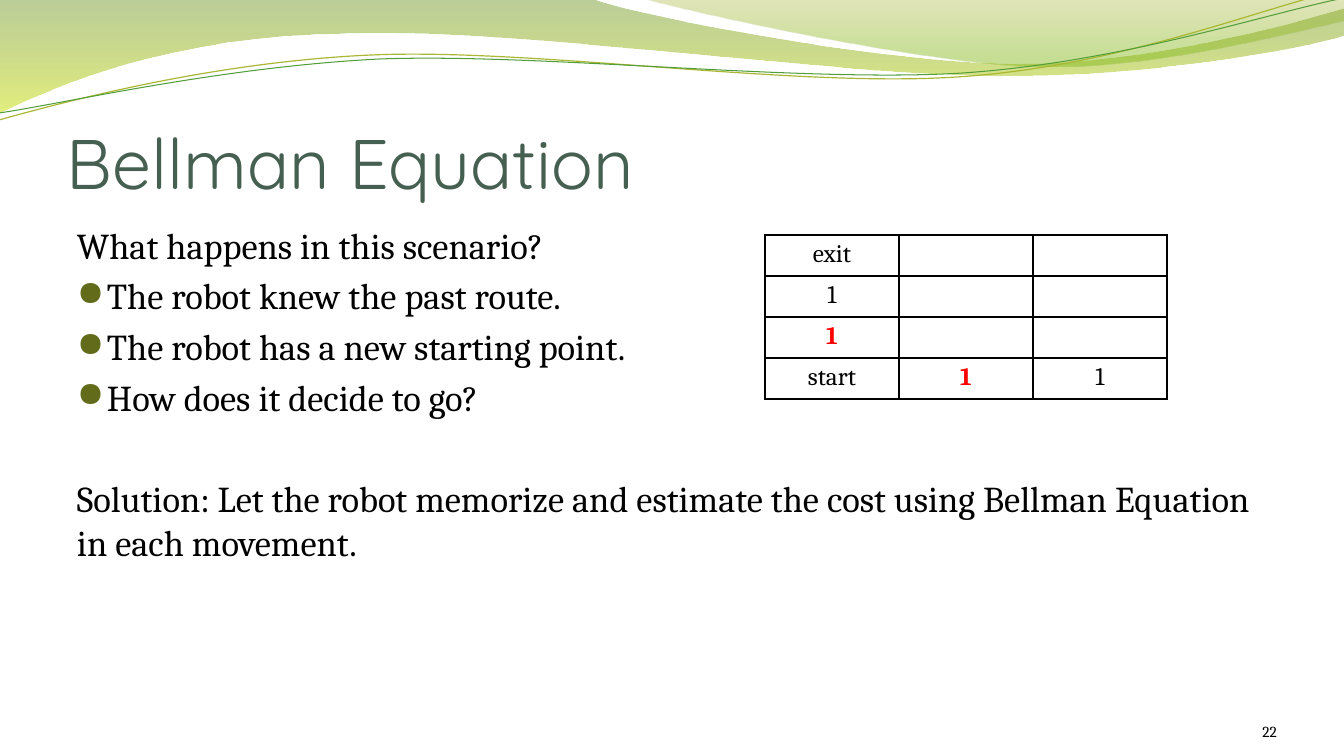
from dataclasses import dataclass

from lxml import etree
from pptx import Presentation
from pptx.dml.color import RGBColor
from pptx.enum.text import MSO_ANCHOR, PP_ALIGN
from pptx.oxml.ns import qn
from pptx.util import Emu, Pt

LEFT, CENTER, RIGHT = PP_ALIGN.LEFT, PP_ALIGN.CENTER, PP_ALIGN.RIGHT
TOP, BOTTOM = MSO_ANCHOR.TOP, MSO_ANCHOR.BOTTOM
SLIDE_W, SLIDE_H = 1344, 756
EMU_PER_PX = 12192000 / SLIDE_W


@dataclass(frozen=True)
class Theme:
    title_font: str = "Quicksand"
    body_font: str = "Cambria"
    bullet_font: str = "OpenSymbol"
    title_size: float = 50
    body_size: float = 26
    table_size: float = 18
    number_size: float = 11
    title: str = "455F51"
    text: str = "000000"
    accent: str = "FF0000"
    bullet: str = "626B1A"
    olive_line: str = "A9B733"
    green_line: str = "549E39"
    # gradient stops: position, colour, opacity in percent
    band: tuple = ((0, "69921C", 45), (1, "CCE10F", 55))
    swoosh: tuple = ((0, "9BAA1A", 30), (0.8, "81BA16", 45))


# Outlines: a start point, then segments of one point (line) or three (curve).
BAND = [
    (0, 0), [(592, -1)],
    [(639, 17), (891, 64), (1019, 64)], [(1146, 64), (1287, 26), (1344, 9)],
    [(1345, 36)],
    [(1322, 44), (1168, 77), (1002, 76)], [(836, 76), (513, 28), (346, 34)],
    [(173, 36), (61, 84), (-2, 114)], [(0, 0)],
]
SWOOSH = [
    (643, -1),
    [(684, 11), (916, 62), (1033, 66)], [(1149, 70), (1292, 32), (1344, 21)],
    [(1344, 0)], [(643, -1)],
]
OLIVE_WAVE = [
    (-1, 120), [(64, 102), (212, 62), (372, 55)],
    [(531, 48), (795, 88), (957, 77)], [(1119, 67), (1261, 8), (1341, -10)],
]
GREEN_WAVE = [
    (-1, 113), [(62, 104), (220, 67), (380, 59)],
    [(541, 53), (802, 83), (963, 73)], [(1123, 62), (1265, 14), (1344, -2)],
]

BODY = [
    # text, bulleted, space before in points
    ("What happens in this scenario?", False, 5),
    ("The robot knew the past route.", True, 5),
    ("The robot has a new starting point.", True, 5),
    ("How does it decide to go?", True, 5),
    ("Solution: Let the robot memorize and estimate the cost using "
     "Bellman Equation in each movement.", False, 41.4),
]
ROUTE = [["exit", "", ""], ["1", "", ""], ["1", "", ""], ["start", "1", "1"]]
NEXT_MOVES = {(2, 0), (3, 1)}


def px(n):
    return Emu(round(n * EMU_PER_PX))


def rgb(color):
    return RGBColor.from_string(color)


def sub(parent, tag, **attrs):
    return etree.SubElement(parent, qn(tag), attrs)


class SlideBuilder:
    def __init__(self, slide, theme):
        self.s = slide
        self.theme = theme

    def freeform(self, outline, close):
        """Draw the outline, joining each three-point segment into a curve."""
        start, *segments = outline
        builder = self.s.shapes.build_freeform(*map(px, start), scale=1.0)
        builder.add_line_segments(
            [tuple(map(px, pt)) for seg in segments for pt in seg], close=close)
        sp = builder.convert_to_shape()
        sp.shadow.inherit = False
        lines = iter(list(sp._element.iter(qn("a:lnTo"))))
        for segment in segments:
            first, *others = [next(lines) for _ in segment]
            if others:
                curve = etree.Element(qn("a:cubicBezTo"))
                first.addprevious(curve)
                for line in (first, *others):
                    curve.append(line[0])
                    line.getparent().remove(line)
        return sp

    def gradient_area(self, outline, stops):
        sp = self.freeform(outline, True)
        sp.line.fill.background()
        sp.fill.gradient()
        sp.fill.gradient_angle = 270
        for stop, (position, color, opacity) in zip(sp.fill.gradient_stops, stops):
            stop.position = position
            stop.color.rgb = rgb(color)
        colors = sp._element.spPr.iter(qn("a:srgbClr"))
        for clr, (position, color, opacity) in zip(colors, stops):
            sub(clr, "a:alpha", val=str(opacity * 1000))

    def wave(self, outline, color, width):
        sp = self.freeform(outline, False)
        sp.fill.background()
        sp.line.color.rgb = rgb(color)
        sp.line.width = Pt(width)

    def run(self, p, text, size, color, font=None, bold=False):
        r = p.add_run()
        r.text = text
        r.font.name = font or self.theme.body_font
        r.font.size = Pt(size)
        r.font.bold = bold
        r.font.color.rgb = rgb(color)

    def text_frame(self, box, insets, anchor=TOP):
        tf = self.s.shapes.add_textbox(*map(px, box)).text_frame
        tf.word_wrap = True
        tf.vertical_anchor = anchor
        (tf.margin_left, tf.margin_top,
         tf.margin_right, tf.margin_bottom) = map(px, insets)
        return tf

    def label(self, box, insets, text, size, color, font=None, align=LEFT):
        """Add one line of text that sits on the bottom of its box."""
        p = self.text_frame(box, insets, BOTTOM).paragraphs[0]
        p.alignment = align
        self.run(p, text, size, color, font)

    def body(self, box, items):
        tf = self.text_frame(box, (10, 5, 10, 5))
        for i, (text, bulleted, space) in enumerate(items):
            p = tf.add_paragraph() if i else tf.paragraphs[0]
            p.space_before = Pt(space)
            if bulleted:
                self.bullet(p)
            self.run(p, text, self.theme.body_size, self.theme.text)

    def bullet(self, p):
        pPr = p._p.get_or_add_pPr()
        pPr.set("marL", str(px(30)))
        pPr.set("indent", str(px(-30)))
        sub(sub(pPr, "a:buClr"), "a:srgbClr", val=self.theme.bullet)
        sub(pPr, "a:buSzPct", val="95000")
        sub(pPr, "a:buFont", typeface=self.theme.bullet_font)
        sub(pPr, "a:buChar", char="●")

    def table(self, left, top, col_w, row_h, rows, highlights):
        n_rows, n_cols = len(rows), len(rows[0])
        table = self.s.shapes.add_table(
            n_rows, n_cols, px(left), px(top),
            px(col_w * n_cols), px(row_h * n_rows)).table
        table.first_row = table.horz_banding = False
        for col in table.columns:
            col.width = px(col_w)
        for i, row in enumerate(rows):
            table.rows[i].height = px(row_h)
            for j, text in enumerate(row):
                cell = table.cell(i, j)
                self.cell_style(cell)
                if text:
                    p = cell.text_frame.paragraphs[0]
                    p.alignment = CENTER
                    marked = (i, j) in highlights
                    color = self.theme.accent if marked else self.theme.text
                    self.run(p, text, self.theme.table_size, color, bold=marked)

    def cell_style(self, cell):
        tcPr = cell._tc.get_or_add_tcPr()
        for side in "LRTB":
            ln = sub(tcPr, f"a:ln{side}", w=str(Pt(1)))
            sub(sub(ln, "a:solidFill"), "a:srgbClr", val=self.theme.text)
        cell.fill.background()


def main():
    prs = Presentation()
    prs.slide_width, prs.slide_height = px(SLIDE_W), px(SLIDE_H)
    theme = Theme()
    b = SlideBuilder(prs.slides.add_slide(prs.slide_layouts[6]), theme)
    b.gradient_area(BAND, theme.band)
    b.gradient_area(SWOOSH, theme.swoosh)
    b.wave(OLIVE_WAVE, theme.olive_line, 0.85)
    b.wave(GREEN_WAVE, theme.green_line, 0.75)
    b.label((67, 78, 1210, 126), (0, 5, 0, 0), "Bellman Equation",
            theme.title_size, theme.title, theme.title_font)
    b.body((67, 218, 1210, 484), BODY)
    b.table(765, 235, 134, 41, ROUTE, NEXT_MOVES)
    b.label((1165, 701, 112, 40), (0, 0, 0, 0), "22",
            theme.number_size, theme.text, align=RIGHT)
    prs.save("out.pptx")


if __name__ == "__main__":
    main()
